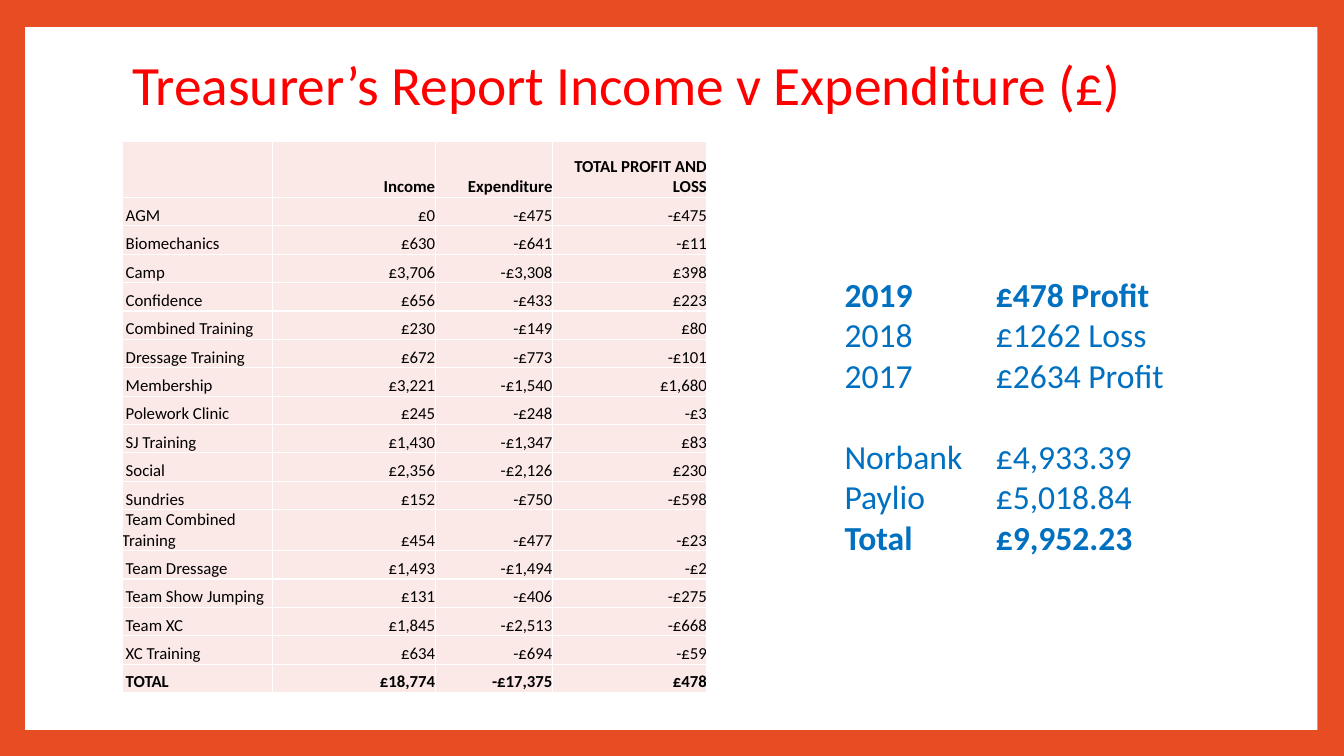
from lxml import etree
from pptx import Presentation
from pptx.dml.color import RGBColor
from pptx.enum.shapes import MSO_SHAPE
from pptx.enum.text import MSO_ANCHOR, MSO_AUTO_SIZE, PP_ALIGN
from pptx.oxml.ns import qn
from pptx.util import Pt

RECT = MSO_SHAPE.RECTANGLE
MIDDLE, BOTTOM = MSO_ANCHOR.MIDDLE, MSO_ANCHOR.BOTTOM
LEFT, RIGHT = PP_ALIGN.LEFT, PP_ALIGN.RIGHT
NO_FIT, GROW = MSO_AUTO_SIZE.NONE, MSO_AUTO_SIZE.SHAPE_TO_FIT_TEXT

COLORS = {"frame": "E84C22", "white": "FFFFFF", "title": "FF0000",
          "cell": "FBE9E8", "black": "000000", "blue": "0070C0"}

COL_WIDTHS = [107.8, 116, 83.8, 110.3]
HEADER_HEIGHT, ROW_HEIGHT, WRAPPED_HEIGHT = 40.4, 20.28, 29.3
WRAPPED_LABEL = "Team Combined Training"
ACCOUNTS = [
    ("", "Income", "Expenditure", "TOTAL PROFIT AND LOSS"),
    ("AGM", "£0", "-£475", "-£475"),
    ("Biomechanics", "£630", "-£641", "-£11"),
    ("Camp", "£3,706", "-£3,308", "£398"),
    ("Confidence", "£656", "-£433", "£223"),
    ("Combined Training", "£230", "-£149", "£80"),
    ("Dressage Training", "£672", "-£773", "-£101"),
    ("Membership", "£3,221", "-£1,540", "£1,680"),
    ("Polework Clinic", "£245", "-£248", "-£3"),
    ("SJ Training", "£1,430", "-£1,347", "£83"),
    ("Social", "£2,356", "-£2,126", "£230"),
    ("Sundries", "£152", "-£750", "-£598"),
    (WRAPPED_LABEL, "£454", "-£477", "-£23"),
    ("Team Dressage", "£1,493", "-£1,494", "-£2"),
    ("Team Show Jumping", "£131", "-£406", "-£275"),
    ("Team XC", "£1,845", "-£2,513", "-£668"),
    ("XC Training", "£634", "-£694", "-£59"),
    ("TOTAL", "£18,774", "-£17,375", "£478"),
]

# label, value, bold, space before
SUMMARY = [
    ("2019", "£478 Profit", True, 0),
    ("2018", "£1262 Loss", False, 0),
    ("2017", "£2634 Profit", False, 0),
    ("Norbank", "£4,933.39", False, 29.3),
    ("Paylio", "£5,018.84", False, 0),
    ("Total", "£9,952.23", True, 0),
]


def rgb(name):
    return RGBColor.from_string(COLORS[name])


def write(p, text, size=12, color="black", bold=False, align=LEFT):
    p.alignment = align
    if text:
        p.add_run().text = text
    font = p.font
    font.name, font.size, font.bold = "Calibri", Pt(size), bold
    font.color.rgb = rgb(color)
    for r in p.runs:
        r.font.name, r.font.size, r.font.bold = "Calibri", Pt(size), bold
        r.font.color.rgb = rgb(color)


def add_panel(slide):
    """White page inside the coloured frame, placed behind everything."""
    sp = slide.shapes.add_shape(RECT, Pt(18), Pt(19.4), Pt(923), Pt(502))
    sp.shadow.inherit = False
    sp.fill.solid()
    sp.fill.fore_color.rgb = rgb("white")
    sp.line.fill.background()
    slide.shapes._spTree.insert(2, sp._element)


def set_title(slide, text):
    sp = slide.shapes.title
    sp.left, sp.top, sp.width, sp.height = Pt(87.1), Pt(34.6), Pt(777.6), Pt(56.2)
    tf = sp.text_frame
    tf.auto_size, tf.vertical_anchor = NO_FIT, MIDDLE
    p = tf.paragraphs[0]
    p.line_spacing = 0.9
    write(p, text, size=39.6, color="title")


def add_borders(cell):
    tc_pr = cell._tc.get_or_add_tcPr()
    for i, side in enumerate(("lnL", "lnR", "lnT", "lnB")):
        ln = etree.Element(qn(f"a:{side}"), w=str(Pt(1)))
        fill = etree.SubElement(ln, qn("a:solidFill"))
        etree.SubElement(fill, qn("a:srgbClr"), val=COLORS["white"])
        tc_pr.insert(i, ln)


def fill_cell(cell, text, bold, align):
    cell.margin_left = cell.margin_right = cell.margin_top = cell.margin_bottom = 0
    cell.vertical_anchor = BOTTOM
    cell.fill.solid()
    cell.fill.fore_color.rgb = rgb("cell")
    add_borders(cell)
    p = cell.text_frame.paragraphs[0]
    if align == LEFT:
        p._p.get_or_add_pPr().set("indent", str(Pt(2.7)))
    write(p, text, bold=bold, align=align)


def row_height(index, label):
    if index == 0:
        return HEADER_HEIGHT
    return WRAPPED_HEIGHT if label == WRAPPED_LABEL else ROW_HEIGHT


def add_accounts(slide):
    heights = [row_height(i, row[0]) for i, row in enumerate(ACCOUNTS)]
    table = slide.shapes.add_table(
        len(ACCOUNTS), len(COL_WIDTHS), Pt(87.1), Pt(100.7),
        Pt(sum(COL_WIDTHS)), Pt(sum(heights))).table
    for col, width in zip(table.columns, COL_WIDTHS):
        col.width = Pt(width)
    for i, values in enumerate(ACCOUNTS):
        table.rows[i].height = Pt(heights[i])
        bold = i in (0, len(ACCOUNTS) - 1)
        for j, text in enumerate(values):
            fill_cell(table.cell(i, j), text, bold, RIGHT if j else LEFT)


def add_tab_stop(p, position):
    tabs = etree.SubElement(p._p.get_or_add_pPr(), qn("a:tabLst"))
    etree.SubElement(tabs, qn("a:tab"), pos=str(Pt(position)), algn="l")


def add_summary(slide):
    tf = slide.shapes.add_textbox(Pt(596.2), Pt(192.2), Pt(268.6), Pt(211)).text_frame
    tf.word_wrap, tf.auto_size = True, GROW
    for i, (label, value, bold, gap) in enumerate(SUMMARY):
        p = tf.add_paragraph() if i else tf.paragraphs[0]
        add_tab_stop(p, 108)
        if gap:
            p.space_before = Pt(gap)
        write(p, f"{label}\t{value}", size=24, color="blue", bold=bold)


def main():
    prs = Presentation()
    prs.slide_width, prs.slide_height = Pt(960), Pt(540)
    slide = prs.slides.add_slide(prs.slide_layouts[5])
    slide.background.fill.solid()
    slide.background.fill.fore_color.rgb = rgb("frame")
    add_panel(slide)
    set_title(slide, "Treasurer’s Report Income v Expenditure (£)")
    add_accounts(slide)
    add_summary(slide)
    prs.save("out.pptx")


if __name__ == "__main__":
    main()
